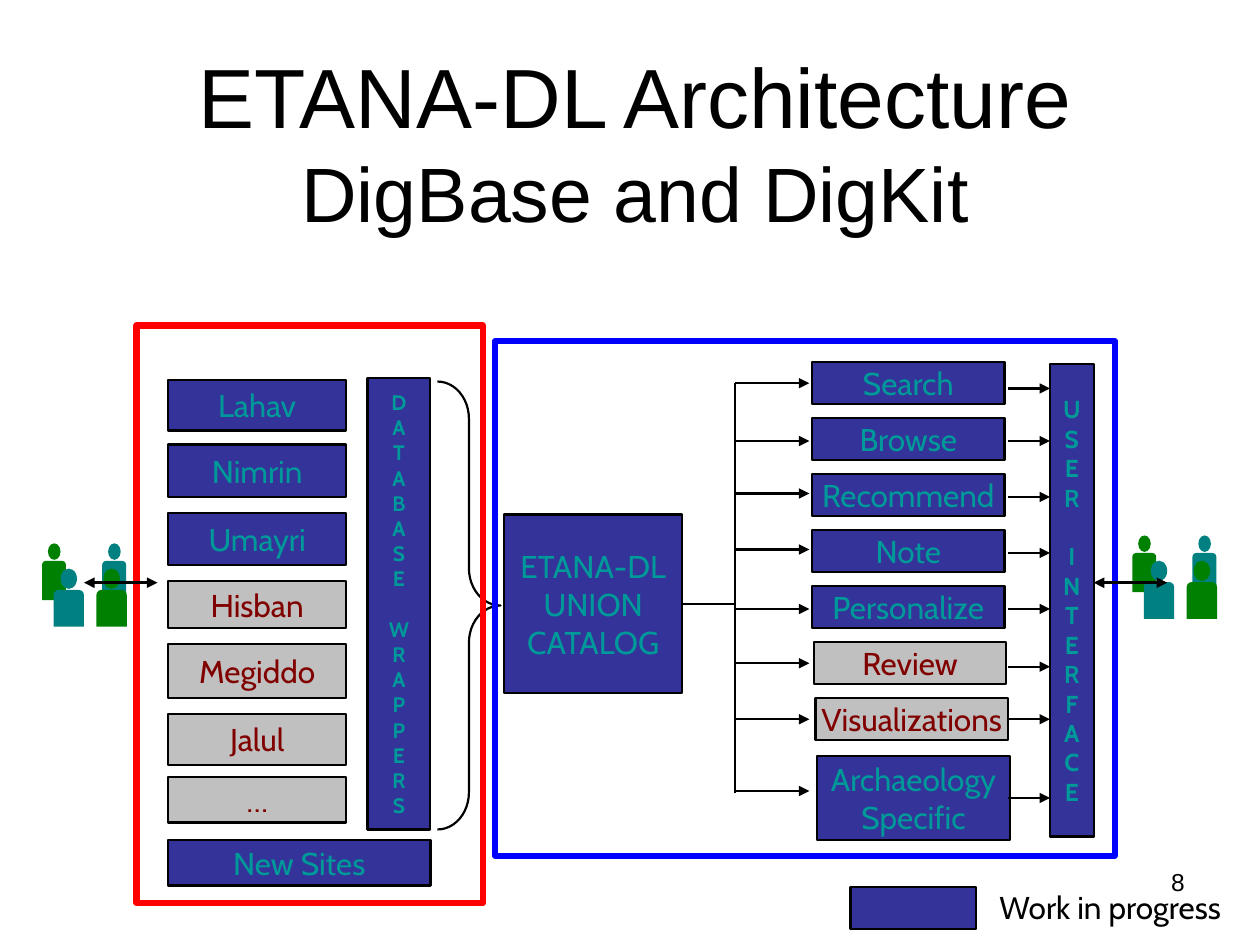
from lxml.etree import SubElement
from pptx import Presentation
from pptx.dml.color import RGBColor
from pptx.enum.shapes import MSO_CONNECTOR, MSO_SHAPE
from pptx.enum.text import MSO_ANCHOR, MSO_AUTO_SIZE, PP_ALIGN
from pptx.oxml.ns import qn
from pptx.util import Pt

BLACK, NAVY, GRAY = "000000", "333399", "C0C0C0"
TEAL, MAROON = "009999", "800000"
PERSON_GREEN, PERSON_TEAL = "008000", "008080"
DONE, PLANNED = (NAVY, TEAL), (GRAY, MAROON)  # fill and text colours


def rgb(color):
    return RGBColor.from_string(color)


class Diagram:
    label_font, plain_font = "Cabin", "Arial"
    label_size, line_width = 18, 1.25

    def __init__(self, slide):
        self.s = slide

    def run(self, p, text, size, font, color=BLACK, bold=False):
        r = p.add_run()
        r.text = text
        r.font.size, r.font.name, r.font.bold = Pt(size), font, bold
        r.font.color.rgb = rgb(color)

    def title(self, x, y, w, h, lines):
        sp = self.s.shapes.title
        sp.left, sp.top, sp.width, sp.height = Pt(x), Pt(y), Pt(w), Pt(h)
        tf = sp.text_frame
        tf.auto_size = MSO_AUTO_SIZE.NONE
        tf.vertical_anchor = MSO_ANCHOR.MIDDLE
        p = tf.paragraphs[0]
        p.alignment = PP_ALIGN.CENTER
        for i, (text, size) in enumerate(lines):
            if i:
                p.add_line_break()
            self.run(p, text, size, self.plain_font)

    def text(self, x, y, w, h, text, size, font, align=PP_ALIGN.LEFT):
        tf = self.s.shapes.add_textbox(Pt(x), Pt(y), Pt(w), Pt(h)).text_frame
        tf.word_wrap = True
        p = tf.paragraphs[0]
        p.alignment = align
        self.run(p, text, size, font)

    def shape(self, kind, x, y, w, h, fill=None, line=None, width=line_width, parent=None):
        shapes = (parent or self.s).shapes
        sp = shapes.add_shape(kind, Pt(x), Pt(y), Pt(w), Pt(h))
        sp.shadow.inherit = False
        if fill:
            sp.fill.solid()
            sp.fill.fore_color.rgb = rgb(fill)
        else:
            sp.fill.background()
        if line:
            sp.line.color.rgb = rgb(line)
            sp.line.width = Pt(width)
        else:
            sp.line.fill.background()
        return sp

    def box(self, x, y, w, h, lines, look=DONE, size=label_size, bold=False, gaps=()):
        """Rectangle with one paragraph per line; gaps lists lines set off by a line's height."""
        fill, color = look
        sp = self.shape(MSO_SHAPE.RECTANGLE, x, y, w, h, fill, BLACK)
        tf = sp.text_frame
        tf.word_wrap = False
        tf.vertical_anchor = MSO_ANCHOR.MIDDLE
        for i, line in enumerate(lines):
            p = tf.add_paragraph() if i else tf.paragraphs[0]
            p.alignment = PP_ALIGN.CENTER
            if i in gaps:
                p.space_before = Pt(size * 1.2)
            self.run(p, line, size, self.label_font, color, bold)
        return sp

    def vertical_box(self, x, y, w, h, first, second, size):
        return self.box(x, y, w, h, first + second, size=size, bold=True, gaps=[len(first)])

    def line(self, x1, y1, x2, y2, ends=(), width=line_width):
        c = self.s.shapes.add_connector(MSO_CONNECTOR.STRAIGHT, Pt(x1), Pt(y1), Pt(x2), Pt(y2))
        c.line.color.rgb = rgb(BLACK)
        c.line.width = Pt(width)
        ln = c.line._get_or_add_ln()
        for end in ends:
            SubElement(ln, qn("a:" + end), type="triangle")
        SubElement(c._element.spPr, qn("a:effectLst"))
        return c

    def people(self, x, y):
        """Four people: two standing behind, two in front."""
        group = self.s.shapes.add_group_shape()
        back = ((0, 10, 13.7, 22.4), (3.4, 0, 7.2, 9.4))
        front = ((6.6, 26.6, 17.4, 21), (10.6, 14.4, 9.4, 11.6))
        people = ((back, 0, PERSON_GREEN), (back, 34.4, PERSON_TEAL),
                  (front, 24.5, PERSON_GREEN), (front, 0, PERSON_TEAL))
        for (body, head), dx, color in people:
            for kind, (px, py, w, h) in ((MSO_SHAPE.ROUND_2_SAME_RECTANGLE, body),
                                         (MSO_SHAPE.OVAL, head)):
                self.shape(kind, x + dx + px, y + py, w, h, color, parent=group)


def main():
    prs = Presentation()
    prs.slide_width, prs.slide_height = Pt(720), Pt(540)
    s = prs.slides.add_slide(prs.slide_layouts[5])
    d = Diagram(s)

    # Title and page number
    d.title(80.6, 50.4, 565, 60.5, [("ETANA-DL Architecture", 48), ("DigBase and DigKit", 44)])
    d.text(516, 492, 168, 37, "8", 14, d.plain_font, PP_ALIGN.RIGHT)

    # Excavation sites
    sites = [("Lahav", 217, 29, DONE), ("Nimrin", 254, 30, DONE), ("Umayri", 293, 30, DONE),
             ("Hisban", 332, 27, PLANNED), ("Megiddo", 368, 31, PLANNED),
             ("Jalul", 408, 29, PLANNED), ("…", 444, 26, PLANNED)]
    for name, y, h, look in sites:
        d.box(96, y, 102, h, [name], look)
    d.box(96, 480, 150, 26, ["New Sites"])

    # Wrappers, brace and catalog
    d.vertical_box(210, 216, 36, 258, "DATABASE", "WRAPPERS", 12)
    brace = d.shape(MSO_SHAPE.RIGHT_BRACE, 250, 218, 36, 256, line=BLACK)
    brace.adjustments[0], brace.adjustments[1] = 0.59, 0.5
    catalog = d.box(288, 294, 102, 102, ["ETANA-DL", "UNION", "CATALOG"])

    # Services: name lines, left, look, arrow in, arrow out
    services = [(["Search"], 464, DONE, 219, 222), (["Browse"], 464, DONE, 252, 252),
                (["Recommend"], 464, DONE, 282, 284), (["Note"], 464, DONE, 314, 316),
                (["Personalize"], 464, DONE, 348, 348), (["Review"], 465, PLANNED, 379, 381),
                (["Visualizations"], 466, PLANNED, 411, 411),
                (["Archaeology", "Specific"], 467, DONE, 452, 456)]
    d.vertical_box(600, 208, 25, 270, "USER", "INTERFACE", 14)
    for i, (lines, x, look, y_in, y_out) in enumerate(services):
        top = 207 + 32 * i if len(lines) == 1 else 432
        d.box(x, top, 110, 24 * len(lines), lines, look)
        d.line(420, y_in, 462.5, y_in, ["tailEnd"])
        d.line(576, y_out, 600, y_out, ["tailEnd"])

    # Line from the catalog to the services
    d.line(420, 219, 420, 453)
    d.line(390, 345, 420, 345).begin_connect(catalog, 3)

    # Frames
    d.shape(MSO_SHAPE.RECTANGLE, 283, 195, 354, 294, line="0000FF", width=3.5)
    d.shape(MSO_SHAPE.RECTANGLE, 78, 186, 198, 330, line="FF0000", width=3.5)

    # Users on both sides
    for x, y, arrow_x in ((24, 310.5, 48), (647, 306, 625)):
        d.people(x, y)
        d.line(arrow_x, 333, arrow_x + 42, 333, ["headEnd", "tailEnd"], 2)

    # Legend
    d.shape(MSO_SHAPE.RECTANGLE, 486, 507, 72, 24, NAVY, BLACK)
    d.text(564, 504, 156, 29, "Work in progress", d.label_size, d.label_font)

    prs.save("out.pptx")


if __name__ == "__main__":
    main()
